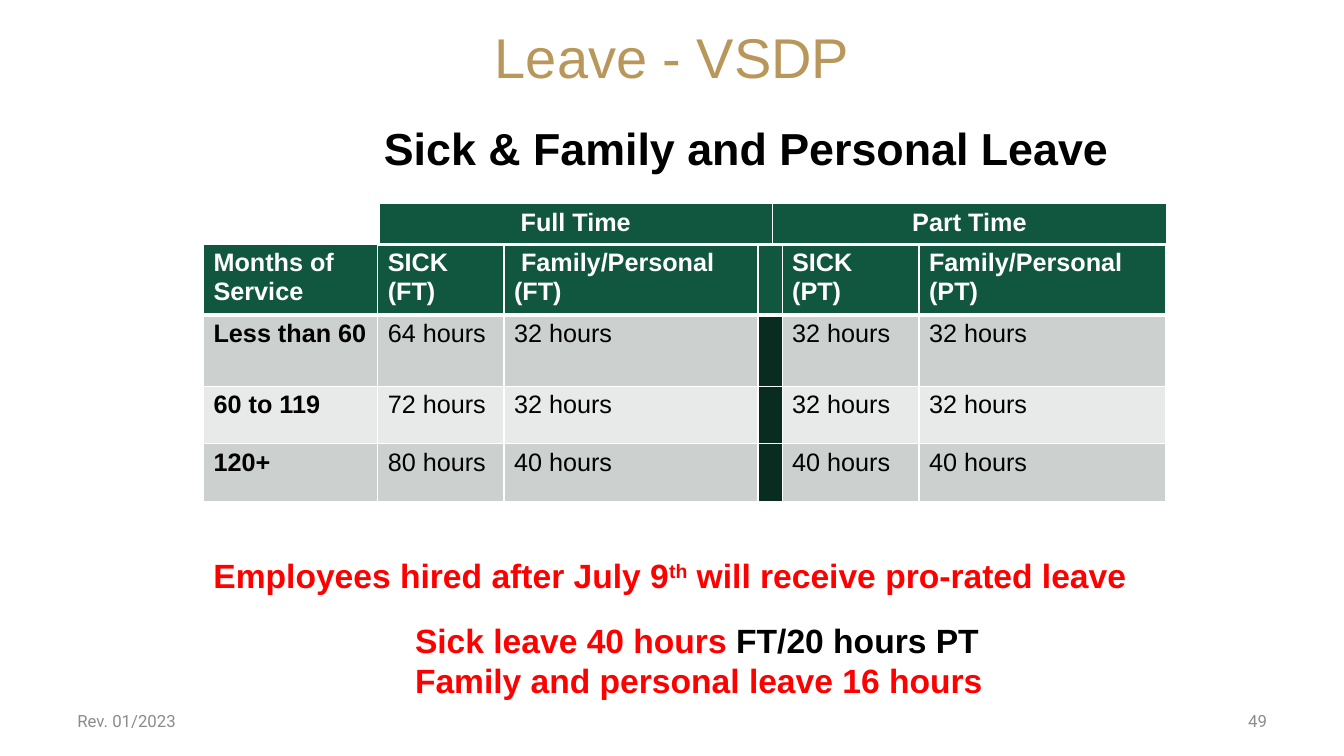
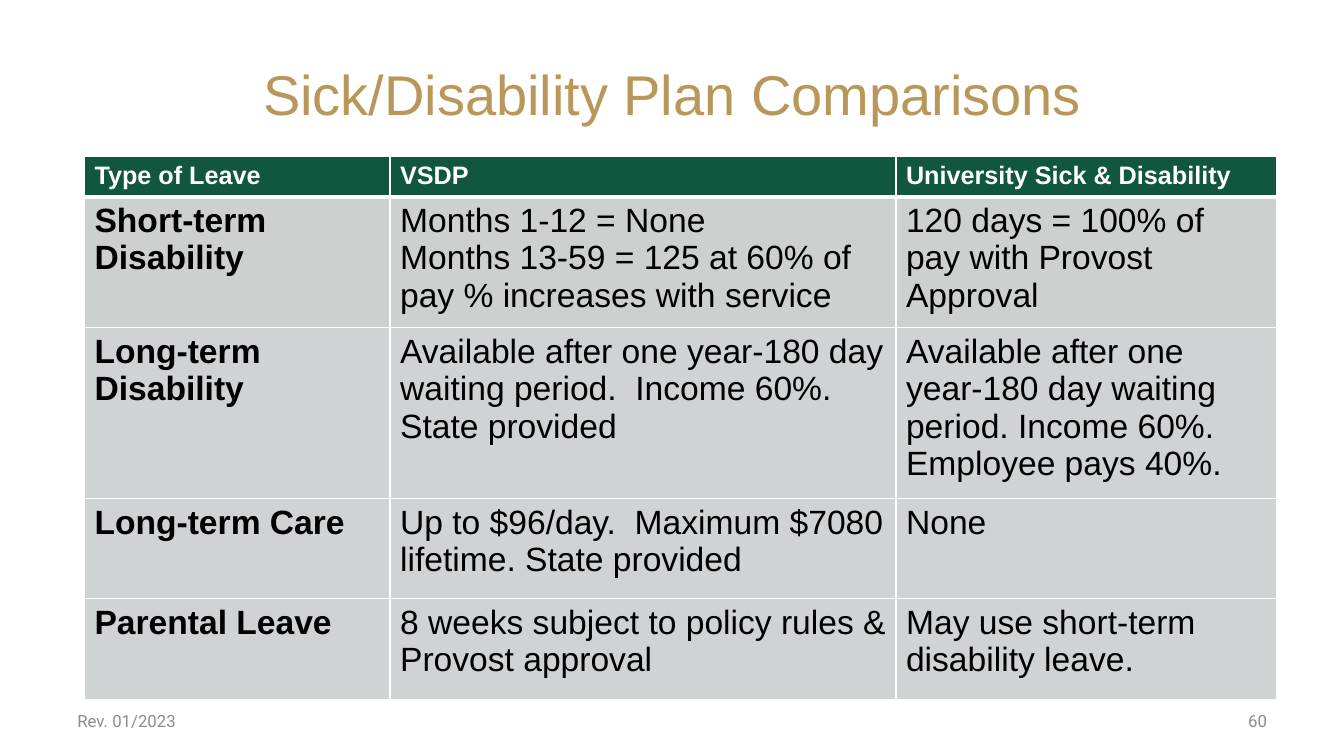
import dataclasses

import pptx
import pptx.dml.color
import pptx.enum.text
import pptx.oxml.ns
import pptx.util
from lxml import etree

Cm, Pt = pptx.util.Cm, pptx.util.Pt
ALIGN = pptx.enum.text.PP_ALIGN
ANCHOR = pptx.enum.text.MSO_ANCHOR
qn = pptx.oxml.ns.qn


def rgb(value):
    return pptx.dml.color.RGBColor.from_string(value)


@dataclasses.dataclass(frozen=True)
class Theme:
    font: str = "Arial"
    footer_font: str = "Roboto"
    gold: str = "B9975B"
    green: str = "115740"
    dark_green: str = "082C20"
    band: str = "CCD1CF"
    light_band: str = "E7EAE8"
    gray: str = "D0D3D4"
    footer: str = "8C8C8C"
    red: str = "FF0000"
    black: str = "000000"
    white: str = "FFFFFF"
    title_size: int = 40
    subtitle_size: int = 32
    large: int = 24
    table_size: int = 18
    footer_size: int = 12
    thin: int = 1
    thick: int = 3


class Deck:
    """Holds the theme, the presentation and the current slide."""

    def __init__(self, theme):
        self.theme = theme
        self.prs = pptx.Presentation()
        self.prs.slide_width, self.prs.slide_height = Cm(33.87), Cm(19.05)
        self.s = None

    def style(self, p, size, color=None, bold=False, align=ALIGN.LEFT, font=None):
        p.alignment = align
        p.font.name = font or self.theme.font
        p.font.size = Pt(size)
        p.font.bold = bold
        if color:
            p.font.color.rgb = rgb(color)

    def slide(self, title, number, top, height):
        t = self.theme
        self.s = self.prs.slides.add_slide(self.prs.slide_layouts[5])
        sp = self.s.shapes.title
        sp.left, sp.top, sp.width, sp.height = Cm(0), Cm(top), Cm(33.87), Cm(height)
        tf = sp.text_frame
        tf.text = title
        tf.vertical_anchor = ANCHOR.MIDDLE
        tf.auto_size = pptx.enum.text.MSO_AUTO_SIZE.NONE
        self.style(tf.paragraphs[0], t.title_size, t.gold, align=ALIGN.CENTER)
        # Footer: revision on the left, page number on the right
        for x, text, align in ((1.7, "Rev. 01/2023", ALIGN.LEFT),
                               (24.28, number, ALIGN.RIGHT)):
            tf = self.box(x, 17.65, 7.9, 1.02, ANCHOR.MIDDLE)
            tf.text = text
            self.style(tf.paragraphs[0], t.footer_size, t.footer, align=align,
                       font=t.footer_font)

    def box(self, x, y, w, h, anchor=ANCHOR.TOP):
        tf = self.s.shapes.add_textbox(Cm(x), Cm(y), Cm(w), Cm(h)).text_frame
        tf.word_wrap = True
        tf.vertical_anchor = anchor
        return tf

    def subtitle(self, text, x, y, w, h):
        tf = self.box(x, y, w, h)
        tf.text = text
        self.style(tf.paragraphs[0], self.theme.subtitle_size, self.theme.black,
                   bold=True, align=ALIGN.CENTER)

    def notice(self, lines, x, y, w, h):
        """Each line is (indent in cm, space before in pt, [(text, color, baseline)])."""
        tf = self.box(x, y, w, h)
        for i, (indent, before, runs) in enumerate(lines):
            p = tf.paragraphs[0] if i == 0 else tf.add_paragraph()
            p._p.get_or_add_pPr().set("marL", str(Cm(indent)))
            if before:
                p.space_before = Pt(before)
            self.style(p, self.theme.large, bold=True)
            for text, color, baseline in runs:
                r = p.add_run()
                r.text = text
                r.font.color.rgb = rgb(color)
                if baseline:
                    r._r.get_or_add_rPr().set("baseline", str(baseline * 1000))

    def borders(self, cell, top, bottom):
        tcPr = cell._tc.get_or_add_tcPr()
        thin = self.theme.thin
        for side, width in (("L", thin), ("R", thin), ("T", top), ("B", bottom)):
            ln = etree.SubElement(tcPr, qn("a:ln" + side), w=str(Pt(width)))
            fill = etree.SubElement(ln, qn("a:solidFill"))
            etree.SubElement(fill, qn("a:srgbClr"), val=self.theme.white)

    def table(self, x, y, widths, heights, rows, fills, size, header=True,
              divider=None, align=ALIGN.LEFT):
        t = self.theme
        tbl = self.s.shapes.add_table(len(rows), len(widths), Cm(x), Cm(y),
                                      Cm(sum(widths)), Cm(sum(heights))).table
        tbl.first_row, tbl.horz_banding = header, False
        for column, width in zip(tbl.columns, widths):
            column.width = Cm(width)
        for i, (row, height, fill) in enumerate(zip(rows, heights, fills)):
            tbl.rows[i].height = Cm(height)
            is_header = header and i == 0
            for j, text in enumerate(row):
                cell = tbl.cell(i, j)
                self.borders(cell, t.thick if header and i == 1 else t.thin,
                             t.thick if i == 0 else t.thin)
                cell.fill.solid()
                is_divider = j == divider and not is_header
                cell.fill.fore_color.rgb = rgb(t.dark_green if is_divider else fill)
                cell.text_frame.text = text
                for p in cell.text_frame.paragraphs:
                    self.style(p, t.table_size if is_header else size,
                               t.white if is_header else t.black,
                               bold=is_header or j == 0, align=align)


def leave_slide(deck):
    t = deck.theme
    deck.slide("Leave - VSDP", "49", -0.05, 2.95)
    deck.subtitle("Sick & Family and Personal Leave", 3.78, 2.92, 30.07, 1.63)

    # Hours by months of service
    deck.table(
        5.13, 6.15, [4.39, 3.18, 6.4, 0.61, 3.45, 6.22], [1.65, 1.8, 1.45, 1.45],
        [["Months of Service", "SICK (FT)", " Family/Personal\n(FT)", "",
          "SICK\n(PT)", "Family/Personal\n(PT)"],
         ["Less than 60", "64 hours", "32 hours", "", "32 hours", "32 hours"],
         ["60 to 119", "72 hours", "32 hours", "", "32 hours", "32 hours"],
         ["120+", "80 hours", "40 hours", "", "40 hours", "40 hours"]],
        [t.green, t.band, t.light_band, t.band], t.table_size, divider=3)
    deck.table(9.55, 5.13, [9.92, 9.92], [1.03], [["Full Time", "Part Time"]],
               [t.green], t.table_size, align=ALIGN.CENTER)

    # Pro-rated leave
    deck.notice([
        (0, 0, [("Employees hired after July 9", t.red, 0), ("th", t.red, 30),
                (" will receive pro-rated leave", t.red, 0)]),
        (5.08, 17, [("Sick leave 40 hours", t.red, 0),
                    (" FT/20 hours PT", t.black, 0)]),
        (5.08, 0, [("Family and personal leave 16 hours", t.red, 0)]),
    ], 5.13, 13.87, 26.7, 3.94)


def comparison_slide(deck):
    t = deck.theme
    deck.slide("Sick/Disability Plan Comparisons", "60", 0.76, 3.18)
    x, widths = 2.13, [7.7, 12.75, 9.6]

    # Disability plans
    deck.table(
        x, 3.94, widths, [1, 3.25, 4.27],
        [["Type of Leave", "VSDP", "University Sick & Disability"],
         ["Short-term Disability",
          "Months 1-12 = None\n"
          "Months 13-59 = 125 at 60% of pay % increases with service",
          "120 days = 100% of pay with Provost Approval"],
         ["Long-term Disability",
          "Available after one year-180 day waiting period.  Income 60%. "
          "State provided",
          "Available after one year-180 day waiting period. Income 60%. "
          "Employee pays 40%."]],
        [t.green, t.band, t.gray], t.large)

    # Other leave
    for y, row in (
            (12.57, ["Long-term Care",
                     "Up to $96/day.  Maximum $7080 lifetime. State provided",
                     "None"]),
            (15.09, ["Parental Leave",
                     "8 weeks subject to policy rules & Provost approval",
                     "May use short-term disability leave."])):
        deck.table(x, y, widths, [2.57], [row], [t.gray], t.large, header=False)


def main():
    deck = Deck(Theme())
    leave_slide(deck)
    comparison_slide(deck)
    deck.prs.save("out.pptx")


if __name__ == "__main__":
    main()
